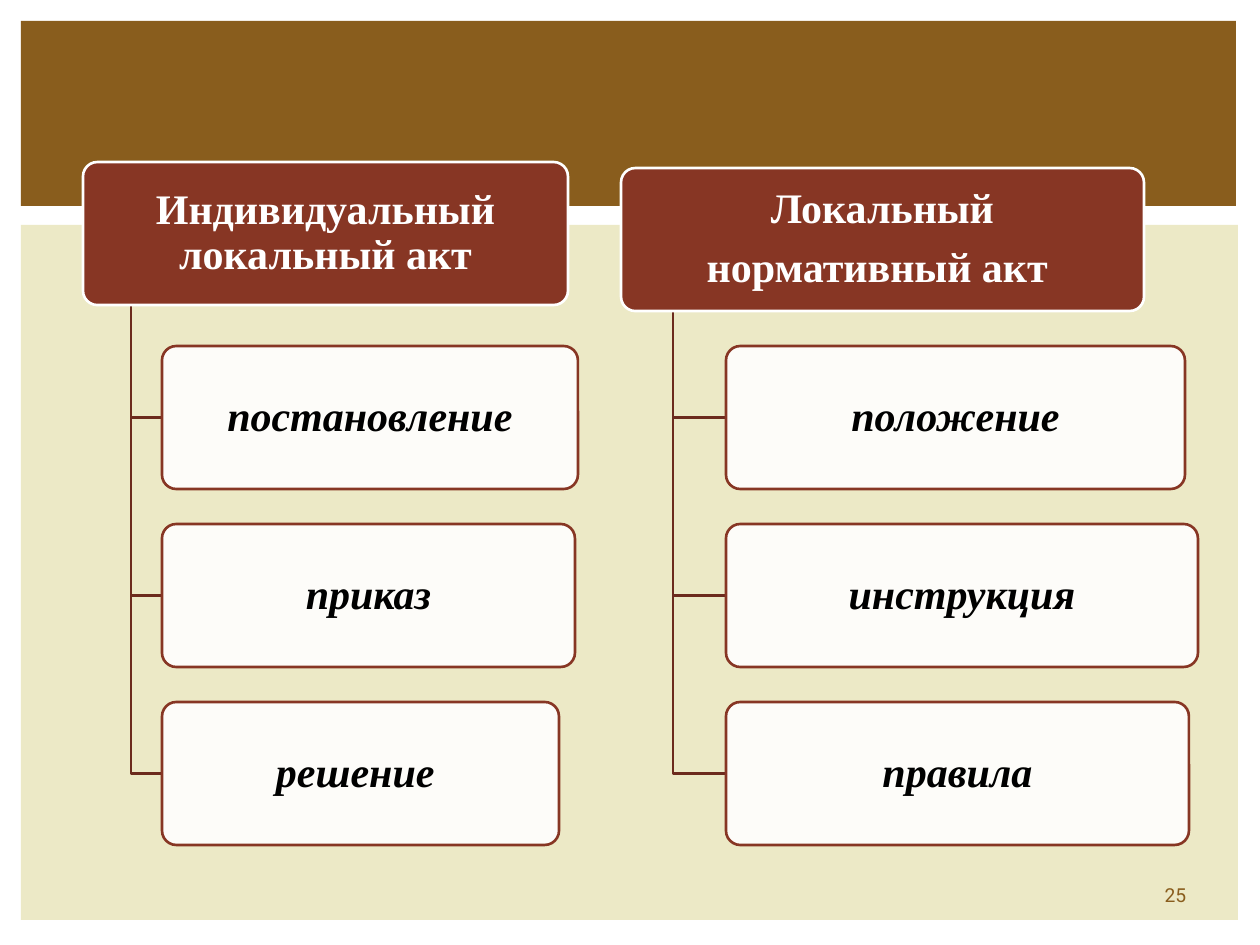
"""Build a slide with two trees of local acts."""
from lxml import etree
from pptx import Presentation, util as u
from pptx.dml.color import RGBColor
from pptx.enum import shapes, text

PX = 914400 / 126
INK = {"brown": "895D1D", "cream": "ECE9C6", "brick": "873624",
       "rust": "6C2B1D", "white": "FFFFFF", "black": "000000"}
KIND = shapes.MSO_SHAPE


def px(*nums):
    return [u.Emu(round(n * PX)) for n in nums]


def write(shape, words, size=24, font="Times New Roman", ink="black",
          bold=True, slant=False, lead=0.9, after=8, pad=(10, 8)):
    frame = shape.text_frame
    frame.word_wrap = True
    frame.vertical_anchor = text.MSO_ANCHOR.MIDDLE
    frame.margin_left = frame.margin_right = px(pad[0])[0]
    frame.margin_top = frame.margin_bottom = px(pad[1])[0]
    frame.text = words
    for para in frame.paragraphs:
        para.alignment = text.PP_ALIGN.CENTER
        para.line_spacing = lead
        para.space_after = u.Pt(after)
        face = para.runs[0].font
        face.name, face.size = font, u.Pt(size)
        face.bold, face.italic = bold, slant
        face.color.rgb = RGBColor.from_string(INK[ink])


deck = Presentation()
deck.slide_width, deck.slide_height = px(1260, 945)
slide = deck.slides.add_slide(deck.slide_layouts[6])
items = slide.shapes

for ink, area in (("cream", (21, 225, 1217, 695)), ("brown", (21, 21, 1215, 185))):
    band = items.add_shape(KIND.RECTANGLE, *px(*area))
    band.shadow.inherit = False
    band.fill.solid()
    band.fill.fore_color.rgb = RGBColor.from_string(INK[ink])
    band.line.fill.background()

TALL, TOP, STEP = 143, 346, 178
trees = [
    ("Индивидуальный локальный акт", (83, 162, 485), 131, 162,
     [("постановление", 416), ("приказ", 413), ("решение ", 397)]),
    ("Локальный\nнормативный акт ", (621, 168, 523), 673, 726,
     [("положение", 459), ("инструкция", 472), ("правила", 463)]),
]

for head, (left, top, wide), stem, edge, leaves in trees:
    cards = [(head, left, top, wide, "brick", "white")]
    for row, (word, span) in enumerate(leaves):
        y = TOP + row * STEP
        cards.append((word, edge, y, span, "white", "brick"))
        mid = y + TALL / 2
        pen = items.build_freeform(*px(stem, top + TALL))
        pen.add_line_segments([px(stem, mid), px(edge, mid)], close=False)
        branch = pen.convert_to_shape()
        branch.shadow.inherit = False
        branch.fill.background()
        branch.line.color.rgb = RGBColor.from_string(INK["rust"])
        branch.line.width = u.Pt(1.5)

    for word, x, y, span, fill, line in cards:
        card = items.add_shape(KIND.ROUNDED_RECTANGLE, *px(x, y, span, TALL))
        card.adjustments[0] = 0.1
        card.shadow.inherit = False
        card.fill.solid()
        card.fill.fore_color.rgb = RGBColor.from_string(INK[fill])
        card.line.color.rgb = RGBColor.from_string(INK[line])
        card.line.width = u.Pt(1.5)
        leaf = fill == "white"
        if leaf:
            tint = card.fill._xPr.find(".//{*}srgbClr")
            etree.SubElement(tint, tint.tag.replace("srgbClr", "alpha"), val="90000")
        write(card, word, ink="black" if leaf else "white", slant=leaf)

page = items.add_textbox(*px(1135, 876, 81, 38))
write(page, "25", size=11, font="Roboto", ink="brown", bold=False,
      lead=1.0, after=0, pad=(13, 6))

deck.save("out.pptx")
